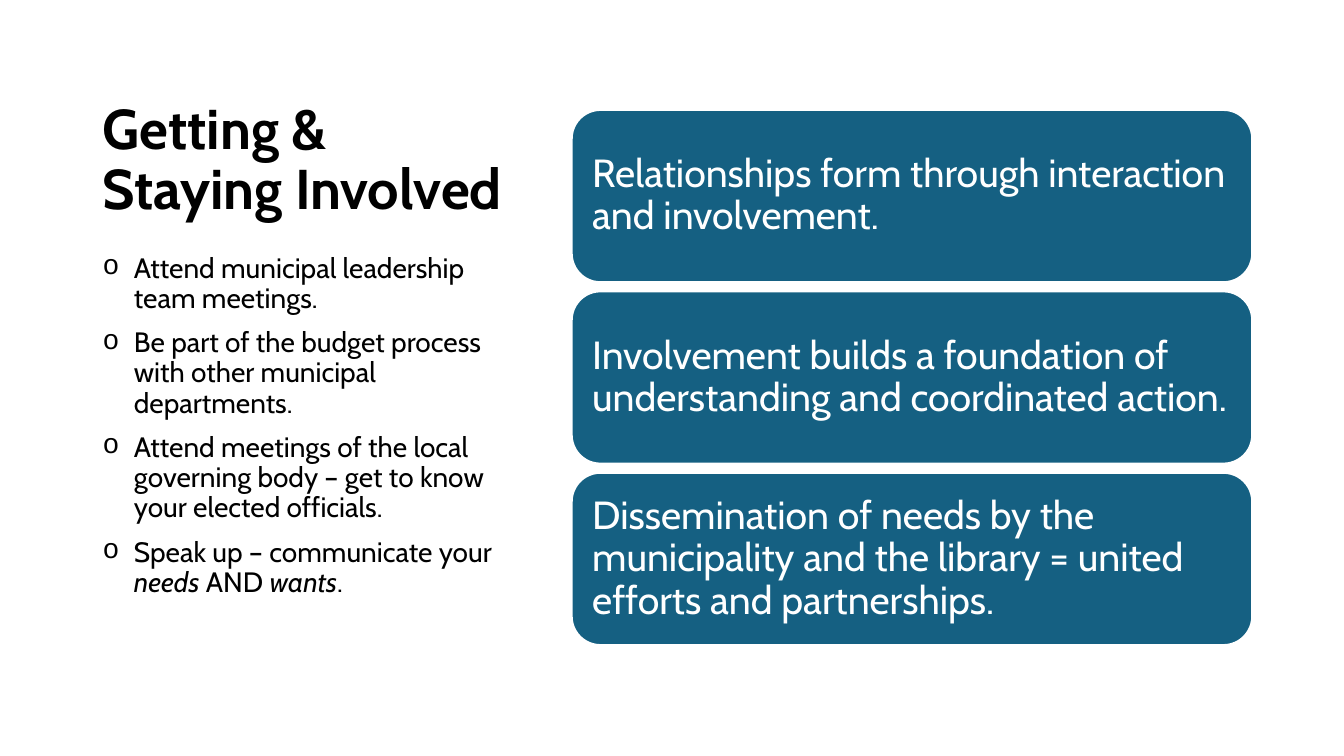
from dataclasses import dataclass

from lxml.etree import SubElement
from pptx import Presentation
from pptx.dml.color import RGBColor
from pptx.enum.shapes import MSO_SHAPE
from pptx.enum.text import MSO_ANCHOR, PP_ALIGN
from pptx.oxml.ns import qn
from pptx.util import Inches, Pt


@dataclass(frozen=True)
class Theme:
    font: str = "Cabin"
    ink: str = "000000"
    paper: str = "FFFFFF"
    card: str = "156082"
    title: int = 40
    body: int = 20
    label: int = 28
    edge: float = 1.5


THEME = Theme()
WIDTH, HEIGHT = 13.33, 7.5

TITLE = "Getting & Staying Involved"
# Each item is a list of (text, italic) runs.
STEPS = [
    [("Attend municipal leadership team meetings.", False)],
    [("Be part of the budget process with other municipal departments.", False)],
    [("Attend meetings of the local governing body – get to know "
      "your elected officials.", False)],
    [("Speak up – communicate your ", False), ("needs", True),
     (" AND ", False), ("wants", True), (".", False)],
]
CARDS = [
    "Relationships form through interaction and involvement.",
    "Involvement builds a foundation of understanding and coordinated action.",
    "Dissemination of needs by the municipality and the library = united "
    "efforts and partnerships.",
]


def color(code):
    return RGBColor.from_string(code)


def add_mark(para, mark, indent):
    """Give a paragraph a bullet character and a hanging indent."""
    props = para._p.get_or_add_pPr()
    props.set("marL", str(Inches(indent)))
    props.set("indent", str(-Inches(indent)))
    SubElement(props, qn("a:buFont"), typeface="Courier New")
    SubElement(props, qn("a:buChar"), char=mark)


def write(shape, items, size, ink=THEME.ink, bold=False, anchor=MSO_ANCHOR.TOP,
          inset=(0.1, 0.05, 0.1, 0.05), mark=None, indent=0.31, gap=0):
    """Fill a shape with paragraphs, each a list of (text, italic) runs."""
    frame = shape.text_frame
    frame.word_wrap = True
    frame.vertical_anchor = anchor
    (frame.margin_left, frame.margin_top,
     frame.margin_right, frame.margin_bottom) = map(Inches, inset)
    for index, runs in enumerate(items):
        para = frame.add_paragraph() if index else frame.paragraphs[0]
        if mark:
            add_mark(para, mark, indent)
        para.alignment = PP_ALIGN.LEFT
        para.line_spacing = 0.9
        if index:
            para.space_before = Pt(gap)
        for text, slant in runs:
            run = para.add_run()
            run.text = text
            font = run.font
            font.name, font.size = THEME.font, Pt(size)
            font.bold, font.italic = bold, slant
            font.color.rgb = color(ink)


def add_intro(slide, left, top, width, height):
    """Place the title over the list of steps."""
    head, gap = 1.75, 0.22
    start = head + gap
    title = slide.shapes.add_textbox(*map(Inches, (left, top, width, head)))
    write(title, [[(TITLE, False)]], THEME.title, bold=True,
          anchor=MSO_ANCHOR.BOTTOM, inset=(0.1, 0.05, 0.14, 0.05))
    steps = slide.shapes.add_textbox(
        *map(Inches, (left, top + start, width, height - start)))
    write(steps, STEPS, THEME.body, mark="o", gap=10)


def add_cards(slide, left, top, width, height):
    """Stack equal cards down the box."""
    gap = 0.09
    pitch = (height + gap) / len(CARDS)
    for row, text in enumerate(CARDS):
        card = slide.shapes.add_shape(
            MSO_SHAPE.ROUNDED_RECTANGLE,
            *map(Inches, (left, top + row * pitch, width, pitch - gap)))
        card.shadow.inherit = False
        card.fill.solid()
        card.fill.fore_color.rgb = color(THEME.card)
        card.line.color.rgb = color(THEME.paper)
        card.line.width = Pt(THEME.edge)
        write(card, [[(text, False)]], THEME.label, ink=THEME.paper,
              anchor=MSO_ANCHOR.MIDDLE, inset=(0.12,) * 4)


def main():
    deck = Presentation()
    deck.slide_width, deck.slide_height = Inches(WIDTH), Inches(HEIGHT)
    slide = deck.slides.add_slide(deck.slide_layouts[6])
    add_intro(slide, 0.92, 0.5, 4.3, 5.92)
    add_cards(slide, 5.67, 1.09, 6.75, 5.31)
    deck.save("out.pptx")


if __name__ == "__main__":
    main()
